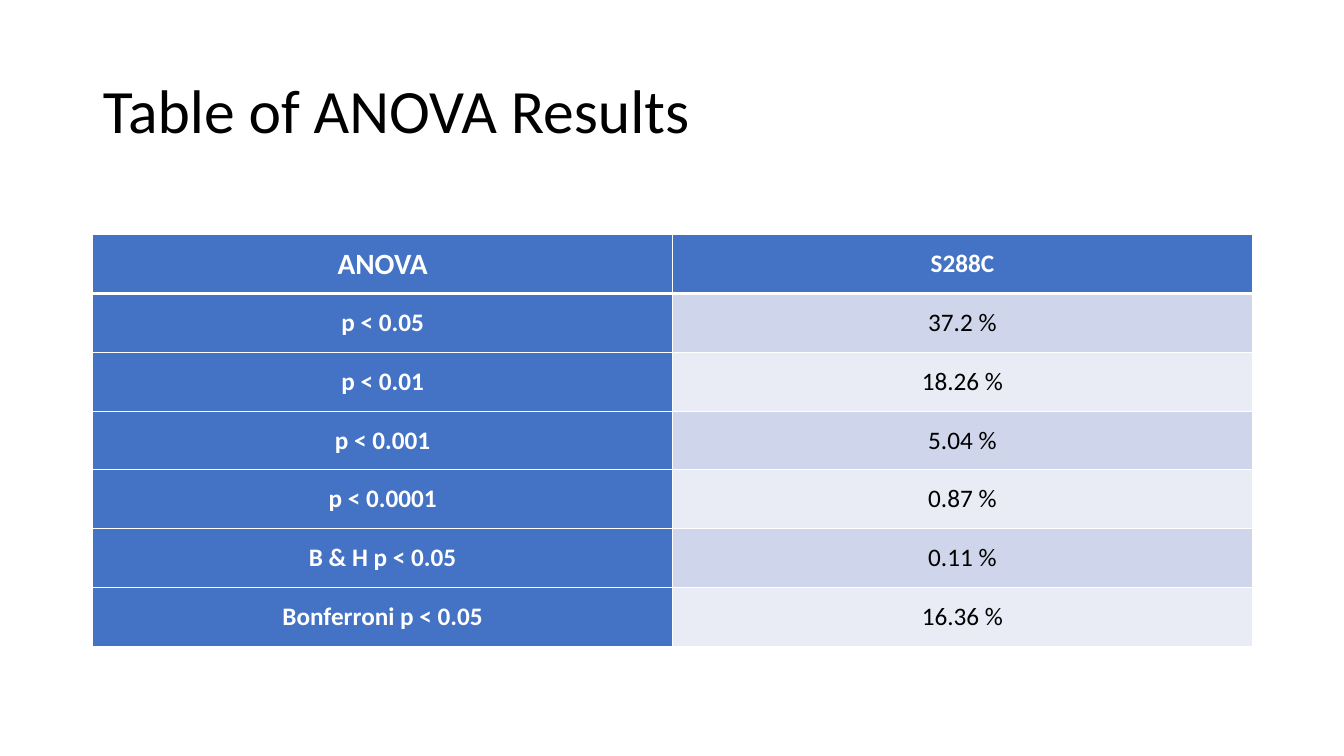
from typing import NamedTuple

from lxml.etree import SubElement
from pptx import Presentation
from pptx.dml.color import RGBColor
from pptx.enum.text import MSO_ANCHOR, MSO_AUTO_SIZE, PP_ALIGN
from pptx.oxml.ns import qn
from pptx.util import Inches, Pt

FONT = "Calibri"
COLORS = {
    "text": "000000",
    "white": "FFFFFF",
    "heading": "4472C4",
    "dark band": "CFD5EA",
    "light band": "E9EBF5",
}
THIN, THICK = 0.75, 2.06
ROW_HEIGHT = 4.08 / 7


class ResultRow(NamedTuple):
    test: str
    share: str


ROWS = [
    ResultRow("ANOVA", "S288C"),
    ResultRow("p < 0.05", "37.2 %"),
    ResultRow("p < 0.01", "18.26 %"),
    ResultRow("p < 0.001", "5.04 %"),
    ResultRow("p < 0.0001", "0.87 %"),
    ResultRow("B & H p < 0.05", "0.11 %"),
    ResultRow("Bonferroni p < 0.05", "16.36 %"),
]


def write_text(frame, text: str, *, size: float, color: str, bold: bool = False,
               align: PP_ALIGN = PP_ALIGN.LEFT, line_spacing: float = 1.0) -> None:
    para = frame.paragraphs[0]
    para.alignment = align
    para.line_spacing = line_spacing
    span = para.add_run()
    span.text = text
    span.font.name = FONT
    span.font.size = Pt(size)
    span.font.bold = bold
    span.font.color.rgb = RGBColor.from_string(COLORS[color])


def add_border(cell, side: str, width: float) -> None:
    properties = cell._tc.get_or_add_tcPr()
    line = SubElement(properties, qn(f"a:ln{side}"), w=str(int(Pt(width))))
    fill = SubElement(line, qn("a:solidFill"))
    SubElement(fill, qn("a:srgbClr"), val=COLORS["white"])


def format_cell(cell, text: str, row: int, column: int) -> None:
    is_heading = row == 0 or column == 0
    band = "dark band" if row % 2 else "light band"
    cell.vertical_anchor = MSO_ANCHOR.MIDDLE

    # Borders come before the fill; the rule under the header row is thicker
    widths = {"L": THIN, "R": THIN,
              "T": THICK if row == 1 else THIN,
              "B": THICK if row == 0 else THIN}
    for side, width in widths.items():
        add_border(cell, side, width)

    cell.fill.solid()
    cell.fill.fore_color.rgb = RGBColor.from_string(
        COLORS["heading" if is_heading else band])
    write_text(cell.text_frame, text, size=21 if row == column == 0 else 18,
               color="white" if is_heading else "text", bold=is_heading,
               align=PP_ALIGN.CENTER)


def add_title(page, text: str) -> None:
    title = page.shapes.title
    title.left, title.top = Inches(0.92), Inches(0.4)
    title.width, title.height = Inches(11.5), Inches(1.45)
    frame = title.text_frame
    frame.word_wrap = True
    frame.auto_size = MSO_AUTO_SIZE.NONE
    frame.vertical_anchor = MSO_ANCHOR.MIDDLE
    write_text(frame, text, size=44, color="text", line_spacing=0.9)


def add_results_table(page, rows: list[ResultRow]) -> None:
    table = page.shapes.add_table(
        len(rows), 2, Inches(0.92), Inches(2.33),
        Inches(11.5), Inches(ROW_HEIGHT * len(rows))).table
    for row, result in enumerate(rows):
        table.rows[row].height = Inches(ROW_HEIGHT)
        for column, text in enumerate(result):
            format_cell(table.cell(row, column), text, row, column)


def main() -> None:
    deck = Presentation()
    deck.slide_width, deck.slide_height = Inches(13.33), Inches(7.5)
    page = deck.slides.add_slide(deck.slide_layouts[5])
    add_title(page, "Table of ANOVA Results")
    add_results_table(page, ROWS)
    deck.save("out.pptx")


if __name__ == "__main__":
    main()
